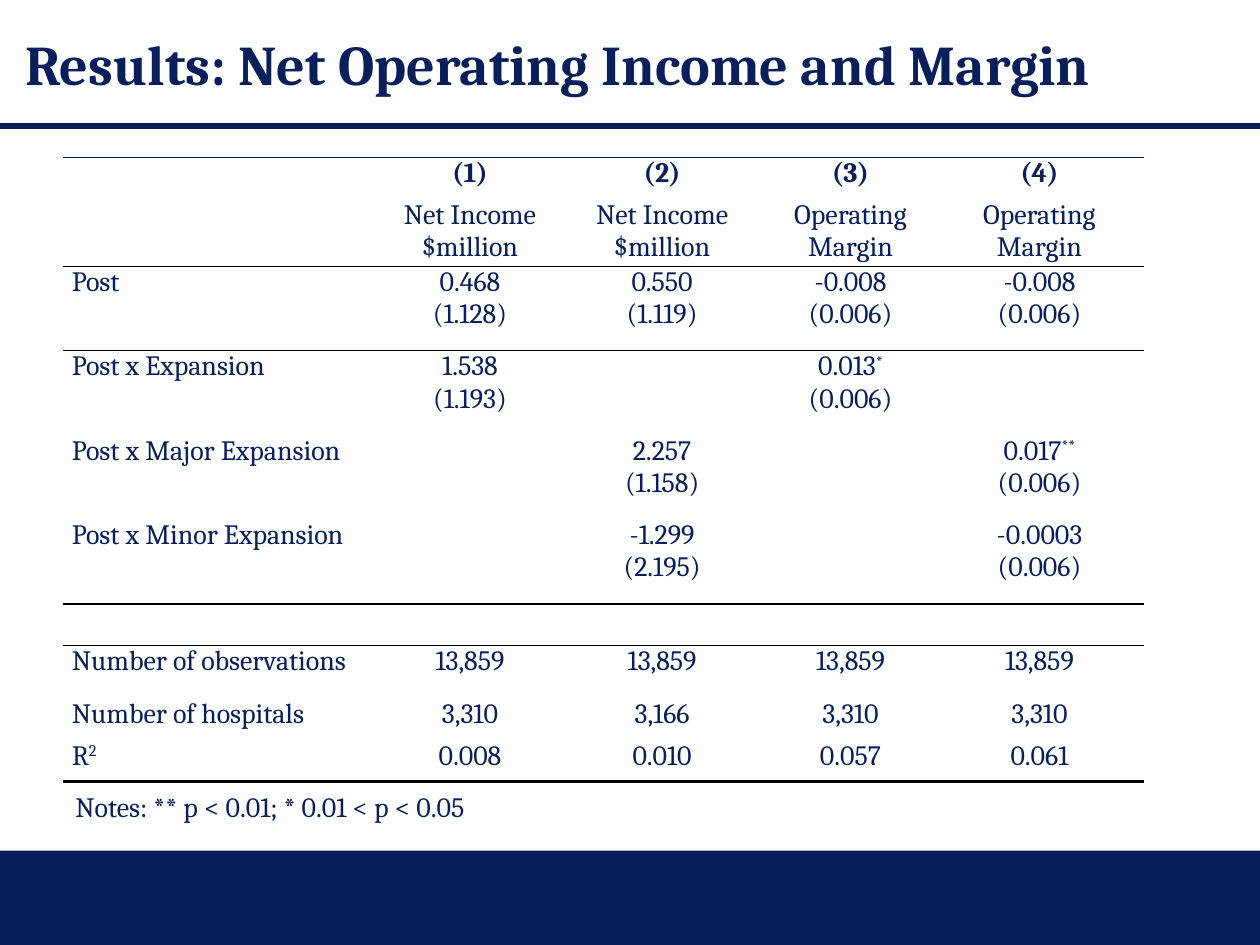
from lxml import etree
from pptx import Presentation
from pptx.dml.color import RGBColor
from pptx.enum import shapes, text
from pptx.oxml import ns
from pptx.util import Inches, Pt

NAVY = RGBColor(0x08, 0x1F, 0x5B)
BLACK = RGBColor(0, 0, 0)
WHITE = RGBColor(0xFF, 0xFF, 0xFF)
FONT = "Cambria"
NO_STYLE = "{2D5ABB26-0587-4C30-8999-92F81FD0307C}"

TITLE = "Results: Net Operating Income and Margin"
NOTES = "Notes: ** p < 0.01; * 0.01 < p < 0.05"
# A newline starts a paragraph; what follows ^ on a line is superscript.
ROWS = [
    ["", "(1)", "(2)", "(3)", "(4)"],
    ["", "Net Income\n$million", "Net Income\n$million", "Operating\nMargin", "Operating\nMargin"],
    ["Post", "0.468\n(1.128)", "0.550\n(1.119)", "-0.008\n(0.006)", "-0.008\n(0.006)"],
    ["Post x Expansion", "1.538\n(1.193)", "", "0.013^*\n(0.006)", ""],
    ["Post x Major Expansion", "", "2.257\n(1.158)", "", "0.017^**\n(0.006)"],
    ["Post x Minor Expansion", "", "-1.299\n(2.195)", "", "-0.0003\n(0.006)"],
    ["", "", "", "", ""],
    ["Number of observations", "13,859", "13,859", "13,859", "13,859"],
    ["Number of hospitals", "3,310", "3,166", "3,310", "3,310"],
    ["R^2", "0.008", "0.010", "0.057", "0.061"],
]
COLUMN_WIDTHS = [2.53, 1.4, 1.65, 1.34, 1.66]
ROW_HEIGHTS = [0.33, 0.51, 0.67, 0.67, 0.67, 0.67, 0.33, 0.42, 0.33, 0.33]
# Rules by the number of rows above them: colour and width in points
RULES = {0: (NAVY, 1), 2: (BLACK, 1), 6: (BLACK, 1), 10: (BLACK, 1.5)}


def write_text(frame, content, size=16, bold=False, align=text.PP_ALIGN.LEFT):
    for index, line in enumerate(content.split("\n")):
        paragraph = frame.paragraphs[0] if index == 0 else frame.add_paragraph()
        paragraph.alignment = align
        paragraph.font.size = Pt(size)
        base, _, raised = line.partition("^")
        for part in filter(None, (base, raised)):
            run = paragraph.add_run()
            run.text = part
            run.font.name = FONT
            run.font.size = Pt(size)
            run.font.bold = bold
            run.font.color.rgb = NAVY
        if raised:
            run.font._element.set("baseline", "30000")


def add_text_box(slide, content, left, top, width, height,
                 anchor=text.MSO_ANCHOR.TOP, **text_format):
    frame = slide.shapes.add_textbox(*map(Inches, (left, top, width, height))).text_frame
    frame.word_wrap = True
    frame.vertical_anchor = anchor
    write_text(frame, content, **text_format)


def add_border(cell, side, color, width):
    properties = cell._tc.get_or_add_tcPr()
    line = etree.SubElement(properties, ns.qn(f"a:ln{side}"), w=str(Pt(width)))
    fill = etree.SubElement(line, ns.qn("a:solidFill"))
    etree.SubElement(fill, ns.qn("a:srgbClr"), val=str(color))


def add_frame(slide):
    footer = slide.shapes.add_shape(shapes.MSO_SHAPE.RECTANGLE, 0, Inches(6.75),
                                    Inches(10), Inches(0.75))
    footer.shadow.inherit = False
    footer.fill.solid()
    footer.fill.fore_color.rgb = NAVY
    footer.line.fill.background()

    divider = slide.shapes.add_connector(shapes.MSO_CONNECTOR.STRAIGHT, 0, Inches(1),
                                         Inches(10), Inches(1))
    divider.line.color.rgb = NAVY
    divider.line.width = Pt(3)
    etree.SubElement(divider._element.spPr, ns.qn("a:effectLst"))


def add_results_table(slide):
    table = slide.shapes.add_table(
        len(ROWS), len(COLUMN_WIDTHS), Inches(0.5), Inches(1.25),
        Inches(sum(COLUMN_WIDTHS)), Inches(sum(ROW_HEIGHTS))).table
    table.first_row = table.horz_banding = False
    table._tbl.tblPr.find(ns.qn("a:tableStyleId")).text = NO_STYLE
    for column, width in zip(table.columns, COLUMN_WIDTHS):
        column.width = Inches(width)
    for row, height in zip(table.rows, ROW_HEIGHTS):
        row.height = Inches(height)

    for row_index, values in enumerate(ROWS):
        for column_index, value in enumerate(values):
            cell = table.cell(row_index, column_index)
            cell.margin_left = cell.margin_right = Inches(0.07)
            cell.margin_top = cell.margin_bottom = 0
            for side, edge in (("T", row_index), ("B", row_index + 1)):
                if edge in RULES:
                    add_border(cell, side, *RULES[edge])
            cell.fill.solid()
            cell.fill.fore_color.rgb = WHITE
            align = text.PP_ALIGN.CENTER if column_index else text.PP_ALIGN.LEFT
            write_text(cell.text_frame, value, bold=row_index == 0, align=align)


def main():
    presentation = Presentation()
    presentation.slide_width, presentation.slide_height = Inches(10), Inches(7.5)
    slide = presentation.slides.add_slide(presentation.slide_layouts[6])
    add_frame(slide)
    add_text_box(slide, TITLE, 0.1, 0, 9.75, 1,
                 anchor=text.MSO_ANCHOR.MIDDLE, size=32, bold=True)
    add_results_table(slide)
    add_text_box(slide, NOTES, 0.5, 6.22, 5.58, 0.4)
    presentation.save("out.pptx")


if __name__ == "__main__":
    main()
